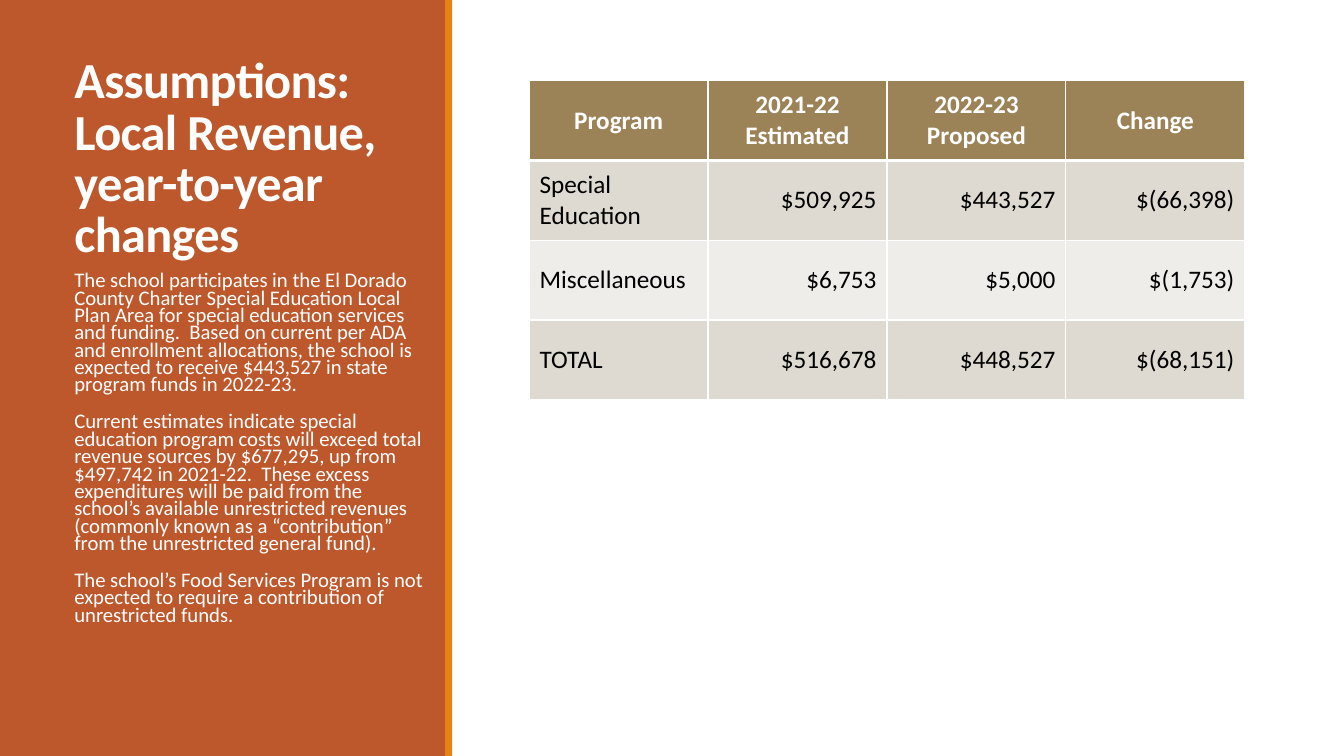
"""Build the local revenue assumptions slide."""
from lxml import etree
from pptx import Presentation
from pptx.dml.color import RGBColor
from pptx.enum.shapes import MSO_SHAPE
from pptx.enum.text import MSO_ANCHOR, MSO_AUTO_SIZE, PP_ALIGN
from pptx.oxml.ns import qn
from pptx.util import Pt

RECTANGLE = MSO_SHAPE.RECTANGLE
LEFT, CENTER, RIGHT = PP_ALIGN.LEFT, PP_ALIGN.CENTER, PP_ALIGN.RIGHT
TOP, MIDDLE, BOTTOM = MSO_ANCHOR.TOP, MSO_ANCHOR.MIDDLE, MSO_ANCHOR.BOTTOM
NO_AUTOFIT = MSO_AUTO_SIZE.NONE
TITLE_ONLY = 5

FONT = "Calibri"
WHITE, BLACK = "FFFFFF", "000000"
RUST, ORANGE = "BD582C", "E48312"
HEADER_FILL = "9B8357"
BAND_FILLS = ("DED9D1", "EFEDEA")

SIDEBAR_LEFT, SIDEBAR_WIDTH = 46, 270
TABLE_LEFT, TABLE_TOP = 378, 57.6
COLUMN_WIDTH, ROW_HEIGHT = 127.8, 57

TITLE = "Assumptions:  Local Revenue,\vyear-to-year changes"
NOTES = [
    "The school participates in the El Dorado County Charter Special Education "
    "Local Plan Area for special education services and funding.  Based on "
    "current per ADA and enrollment allocations, the school is expected to "
    "receive $443,527 in state program funds in 2022-23.",
    "Current estimates indicate special education program costs will exceed "
    "total revenue sources by $677,295, up from $497,742 in 2021-22.  These "
    "excess expenditures will be paid from the school’s available unrestricted "
    "revenues (commonly known as a “contribution” from the unrestricted "
    "general fund).",
    "The school’s Food Services Program is not expected to require a "
    "contribution of unrestricted funds.",
]
REVENUE = [
    ("Program", "2021-22 Estimated", "2022-23 Proposed", "Change"),
    ("Special Education", "$509,925", "$443,527", "$(66,398)"),
    ("Miscellaneous", "$6,753", "$5,000", "$(1,753)"),
    ("TOTAL", "$516,678", "$448,527", "$(68,151)"),
]


def paint(color_format, color):
    """Set a fill to a solid hex colour."""
    color_format.solid()
    color_format.fore_color.rgb = RGBColor.from_string(color)


def write(frame, paragraphs, size, color=WHITE, bold=False, align=LEFT,
          line_spacing=1.0, before=0, after=0, tracking=0):
    """Fill a text frame with equally formatted paragraphs."""
    for index, text in enumerate(paragraphs):
        paragraph = frame.paragraphs[0] if index == 0 else frame.add_paragraph()
        paragraph.text = text
        paragraph.alignment = align
        paragraph.line_spacing = line_spacing
        paragraph.space_before = Pt(before if index else 0)
        paragraph.space_after = Pt(after)
        for run in paragraph.runs:
            run.font.name = FONT
            run.font.size = Pt(size)
            run.font.bold = bold
            run.font.color.rgb = RGBColor.from_string(color)
            if tracking:
                run._r.get_or_add_rPr().set("spc", str(int(tracking * 100)))


def place_text(shape, top, height, anchor):
    """Place a text shape in the sidebar and set up its frame."""
    shape.left, shape.top = Pt(SIDEBAR_LEFT), Pt(top)
    shape.width, shape.height = Pt(SIDEBAR_WIDTH), Pt(height)
    frame = shape.text_frame
    frame.word_wrap = True
    frame.auto_size = NO_AUTOFIT
    frame.vertical_anchor = anchor
    return frame


def add_band(slide, left, width, color):
    """Add a full-height vertical colour band."""
    band = slide.shapes.add_shape(RECTANGLE, Pt(left), 0, Pt(width), Pt(540))
    band.shadow.inherit = False
    paint(band.fill, color)
    band.line.fill.background()


def add_borders(cell, top, bottom):
    """Draw white borders around a table cell."""
    properties = cell._tc.get_or_add_tcPr()
    for side, width in (("L", 1), ("R", 1), ("T", top), ("B", bottom)):
        line = etree.SubElement(properties, qn(f"a:ln{side}"), w=str(Pt(width)))
        fill = etree.SubElement(line, qn("a:solidFill"))
        etree.SubElement(fill, qn("a:srgbClr"), val=WHITE)


def add_revenue_table(slide):
    """Add the table of yearly revenue by program."""
    rows, columns = len(REVENUE), len(REVENUE[0])
    table = slide.shapes.add_table(
        rows, columns, Pt(TABLE_LEFT), Pt(TABLE_TOP),
        Pt(columns * COLUMN_WIDTH), Pt(rows * ROW_HEIGHT)).table
    for row, values in enumerate(REVENUE):
        header = row == 0
        for column, value in enumerate(values):
            cell = table.cell(row, column)
            cell.vertical_anchor = MIDDLE
            cell.margin_left = cell.margin_right = Pt(7.5)
            add_borders(cell, 3 if row == 1 else 1, 3 if header else 1)
            paint(cell.fill, HEADER_FILL if header else BAND_FILLS[(row - 1) % 2])
            align = CENTER if header else RIGHT if column else LEFT
            write(cell.text_frame, [value], 18, WHITE if header else BLACK,
                  bold=header, align=align)


def main():
    """Build and save the presentation."""
    presentation = Presentation()
    presentation.slide_width, presentation.slide_height = Pt(960), Pt(540)
    slide = presentation.slides.add_slide(presentation.slide_layouts[TITLE_ONLY])
    add_band(slide, 0, 319, RUST)
    add_band(slide, 318, 5, ORANGE)
    title = slide.shapes.title
    slide.shapes._spTree.append(title._element)
    write(place_text(title, 26.6, 165, BOTTOM), [TITLE], 36, bold=True,
          line_spacing=0.85, tracking=-0.5)
    add_revenue_table(slide)
    notes = slide.shapes.add_textbox(0, 0, 0, 0)
    write(place_text(notes, 192, 266.4, TOP), NOTES, 14.8,
          line_spacing=0.7, before=12, after=2)
    presentation.save("out.pptx")


if __name__ == "__main__":
    main()
